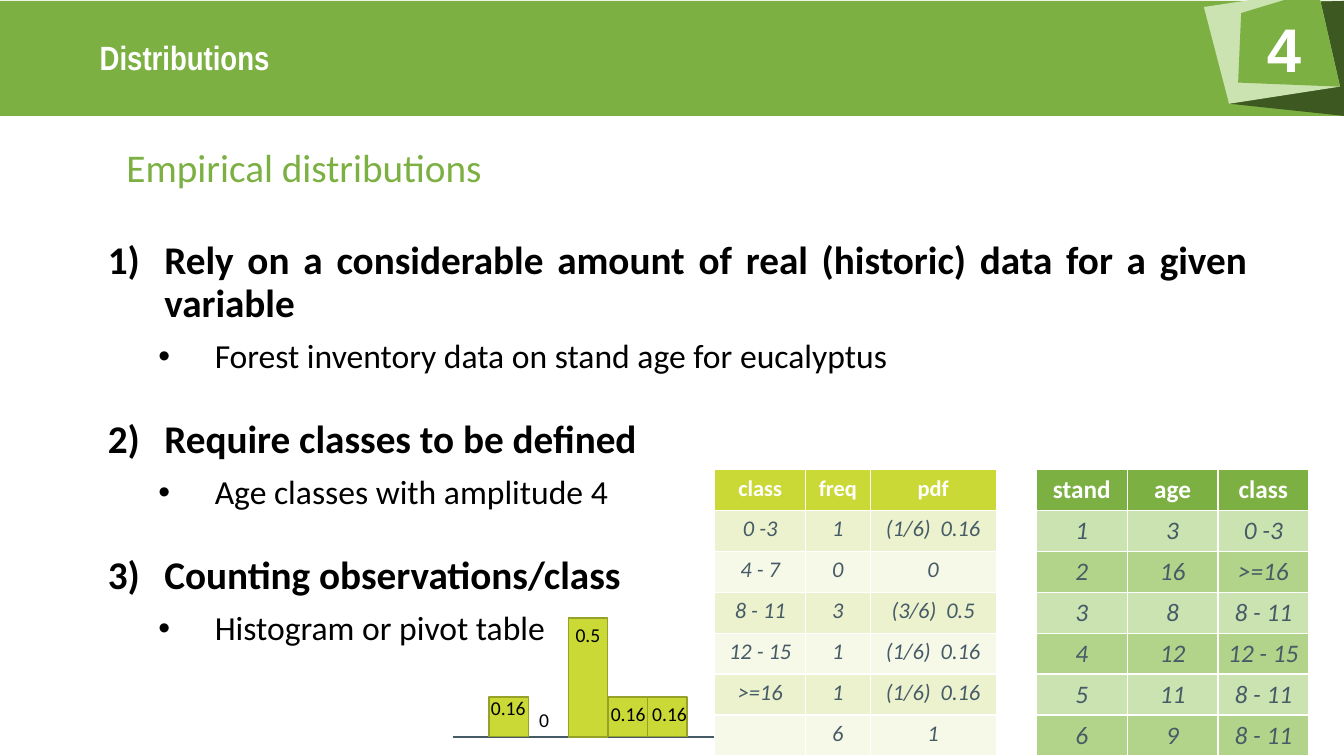
"""Build the slide on empirical distributions."""
from dataclasses import dataclass

from lxml.etree import SubElement
from pptx import Presentation
from pptx.dml.color import RGBColor
from pptx.enum.shapes import MSO_CONNECTOR, MSO_SHAPE
from pptx.enum.text import MSO_ANCHOR, MSO_AUTO_SIZE, PP_ALIGN
from pptx.oxml.ns import qn
from pptx.util import Inches, Pt

COLORS = {
    "green": "7CB042", "dark_green": "3E5821", "pale_green": "CBE2B1",
    "mid_green": "B1D38A", "lime": "CAD936", "dark_lime": "95A128",
    "pale_lime": "ECF1CE", "faint_lime": "F6F8E8", "slate": "455B66",
    "white": "FFFFFF", "black": "000000",
}
FRAME = {"word_wrap": True, "auto_size": MSO_AUTO_SIZE.NONE,
         "vertical_anchor": MSO_ANCHOR.TOP}
BADGE_FRAME = {"vertical_anchor": MSO_ANCHOR.MIDDLE, "word_wrap": True,
               "margin_left": Inches(0.2), "margin_top": Inches(0.4),
               "margin_right": Inches(0.3), "margin_bottom": Inches(0.2)}
ITEM_SPACING = {"alignment": PP_ALIGN.JUSTIFY, "line_spacing": 0.9, "space_before": Pt(10)}
POINT_FONT = {"name": "Calibri", "size": Pt(28), "bold": True}
DETAIL_FONT = {"name": "Calibri", "size": Pt(24), "bold": False}
LABEL_FONT = {"name": "Calibri", "size": Pt(14)}

BAR_STEP = 0.393
BASELINE = 7.31
FIRST_BAR = 4.85


@dataclass
class Facet:
    """One flat polygon of the page badge."""
    color: str
    corners: list[tuple[float, float]]


@dataclass
class Point:
    """A numbered point with its bulleted detail."""
    heading: str
    detail: str


@dataclass
class AgeClass:
    """A histogram class with its count and label position."""
    count: int
    label: str
    left: float
    top: float


@dataclass
class Grid:
    """A table with its position, colours and contents."""
    left: float
    widths: list[float]
    size: int
    header: str
    bands: tuple[str, str]
    rows: list[list[str]]


FACETS = [
    Facet("dark_green", [(13.33, 0.01), (13.33, 1.15), (12.2, 1.03), (12.42, 0.27), (12.55, 0.03)]),
    Facet("pale_green", [(13.07, -0.1), (13.29, 0.86), (12.19, 1.03), (11.94, 0.07)]),
    Facet("green", [(13.07, -0.1), (13.29, 0.86), (12.28, 0.82), (12.31, 0.13)]),
]
POINTS = [
    Point("Rely on a considerable amount of real (historic) data for a given variable",
          "Forest inventory data on stand age for eucalyptus"),
    Point("Require classes to be defined", "Age classes with amplitude 4"),
    Point("Counting observations/class", "Histogram or pivot table"),
]
AGE_CLASSES = [
    AgeClass(1, "0.16", 4.77, 6.85),
    AgeClass(0, "0", 5.25, 6.97),
    AgeClass(3, "0.5", 5.61, 6.13),
    AgeClass(1, "0.16", 5.96, 6.91),
    AgeClass(1, "0.16", 6.37, 6.91),
]
STANDS = Grid(10.28, [0.9, 0.9, 0.9], 18, "green", ("pale_green", "mid_green"), [
    ["stand", "age", "class"],
    ["1", "3", "0 -3"],
    ["2", "16", ">=16"],
    ["3", "8", "8 - 11"],
    ["4", "12", "12 - 15"],
    ["5", "11", "8 - 11"],
    ["6", "9", "8 - 11"],
])
FREQUENCIES = Grid(7.09, [0.9, 0.64, 1.25], 16, "lime", ("pale_lime", "faint_lime"), [
    ["class", "freq", "pdf"],
    ["0 -3", "1", "(1/6)  0.16"],
    ["4 - 7", "0", "0"],
    ["8 - 11", "3", "(3/6)  0.5"],
    ["12 - 15", "1", "(1/6)  0.16"],
    [">=16", "1", "(1/6)  0.16"],
    ["", "6", "1"],
])


def rgb(color: str) -> RGBColor:
    """Look up a named colour."""
    return RGBColor.from_string(COLORS[color])


def apply_format(target, values: dict) -> None:
    """Set every given attribute on the target."""
    for attribute, value in values.items():
        setattr(target, attribute, value)


def paint(shape, fill: str, outline: str | None = None) -> None:
    """Give a shape a flat fill and an optional outline."""
    shape.shadow.inherit = False
    shape.fill.solid()
    shape.fill.fore_color.rgb = rgb(fill)
    if outline:
        shape.line.color.rgb = rgb(outline)
        shape.line.width = Pt(1)
    else:
        shape.line.fill.background()


def write(paragraph, text: str, font: dict, color: str, layout: dict) -> None:
    """Put one formatted run into a paragraph."""
    apply_format(paragraph, layout)
    run = paragraph.add_run()
    run.text = text
    apply_format(run.font, font)
    run.font.color.rgb = rgb(color)


def place(shape, left: float, top: float, width: float, height: float) -> None:
    """Move and size a shape in inches."""
    apply_format(shape, {"left": Inches(left), "top": Inches(top),
                         "width": Inches(width), "height": Inches(height)})


def add_label(slide, box: tuple[float, ...], text: str, font: dict, color: str) -> None:
    """Add a one-line text box."""
    label = slide.shapes.add_textbox(*map(Inches, box))
    apply_format(label.text_frame, FRAME)
    write(label.text_frame.paragraphs[0], text, font, color, {"alignment": PP_ALIGN.LEFT})


def add_header(slide) -> None:
    """Draw the band, the page badge and the chapter name."""
    band = slide.shapes.add_shape(MSO_SHAPE.RECTANGLE, 0, Inches(0.01), Inches(13.33), Inches(1.14))
    paint(band, "green")
    for facet in FACETS:
        corners = [(Inches(x), Inches(y)) for x, y in facet.corners]
        outline = slide.shapes.build_freeform(*corners[0])
        outline.add_line_segments(corners[1:])
        badge = outline.convert_to_shape()
        paint(badge, facet.color)
    apply_format(badge.text_frame, BADGE_FRAME)
    write(badge.text_frame.paragraphs[0], "4", {"name": "Arial", "size": Pt(44), "bold": True},
          "white", {"alignment": PP_ALIGN.CENTER})
    add_label(slide, (0.89, 0.32, 4.24, 0.5), "Distributions",
              {"name": "Arial Narrow", "size": Pt(24), "bold": True}, "white")


def add_item(paragraph, text: str, font: dict, indent: float, marker: str, values: dict) -> None:
    """Write a list item with a hanging marker."""
    write(paragraph, text, font, "black", ITEM_SPACING)
    properties = paragraph._p.get_or_add_pPr()
    properties.set("marL", str(Inches(indent)))
    properties.set("indent", str(-Inches(0.56)))
    SubElement(properties, qn("a:buFont"), typeface="Arial" if marker == "a:buChar" else "+mj-lt")
    SubElement(properties, qn(marker), **values)


def fill_points(body) -> None:
    """Fill the body with numbered points and their details."""
    place(body, 0.97, 2.34, 11.5, 4.7)
    frame = body.text_frame
    apply_format(frame, FRAME)
    for index, point in enumerate(POINTS):
        heading = frame.add_paragraph() if index else frame.paragraphs[0]
        add_item(heading, point.heading, POINT_FONT, 0.56, "a:buAutoNum", {"type": "arabicParenR"})
        if index:
            heading.space_before = Pt(31)
        detail = frame.add_paragraph()
        detail.level = 1
        add_item(detail, point.detail, DETAIL_FONT, 1.06, "a:buChar", {"char": "•"})


def add_histogram(slide) -> None:
    """Draw the axis, the bars and their labels."""
    axis = slide.shapes.add_connector(MSO_CONNECTOR.STRAIGHT, Inches(4.49), Inches(BASELINE),
                                      Inches(7.16), Inches(BASELINE))
    axis.line.color.rgb = rgb("slate")
    axis.line.width = Pt(1.5)
    SubElement(axis._element.spPr, qn("a:effectLst"))
    for index, age_class in enumerate(AGE_CLASSES):
        if age_class.count:
            height = BAR_STEP * age_class.count
            box = (FIRST_BAR + BAR_STEP * index, BASELINE - height, BAR_STEP, height)
            bar = slide.shapes.add_shape(MSO_SHAPE.RECTANGLE, *map(Inches, box))
            paint(bar, "lime", "dark_lime")
    for age_class in AGE_CLASSES:
        add_label(slide, (age_class.left, age_class.top, 0.66, 0.34), age_class.label, LABEL_FONT, "black")


def add_grid(slide, grid: Grid) -> None:
    """Draw a table with a header row and two row shades."""
    table = slide.shapes.add_table(len(grid.rows), len(grid.widths), Inches(grid.left), Inches(4.66),
                                   Inches(sum(grid.widths)), Inches(2.84)).table
    for column, width in zip(table.columns, grid.widths):
        column.width = Inches(width)
    for row, texts in enumerate(grid.rows):
        for column, text in enumerate(texts):
            cell = table.cell(row, column)
            cell.fill.solid()
            cell.fill.fore_color.rgb = rgb(grid.bands[(row - 1) % 2] if row else grid.header)
            font = {"name": "Calibri", "size": Pt(grid.size), "bold": row == 0, "italic": row > 0}
            write(cell.text_frame.paragraphs[0], text, font, "slate" if row else "white",
                  {"alignment": PP_ALIGN.CENTER})


def main() -> None:
    """Build and save the slide."""
    deck = Presentation()
    deck.slide_width, deck.slide_height = Inches(13.33), Inches(7.5)
    slide = deck.slides.add_slide(deck.slide_layouts[1])
    add_header(slide)
    title, body = slide.placeholders
    place(title, 0.74, 1.37, 4.55, 0.57)
    apply_format(title.text_frame, FRAME)
    write(title.text_frame.paragraphs[0], "Empirical distributions",
          {"name": "Calibri", "size": Pt(28)}, "green", {"alignment": PP_ALIGN.CENTER})
    fill_points(body)
    add_grid(slide, STANDS)
    add_histogram(slide)
    add_grid(slide, FREQUENCIES)
    deck.save("out.pptx")


if __name__ == "__main__":
    main()
